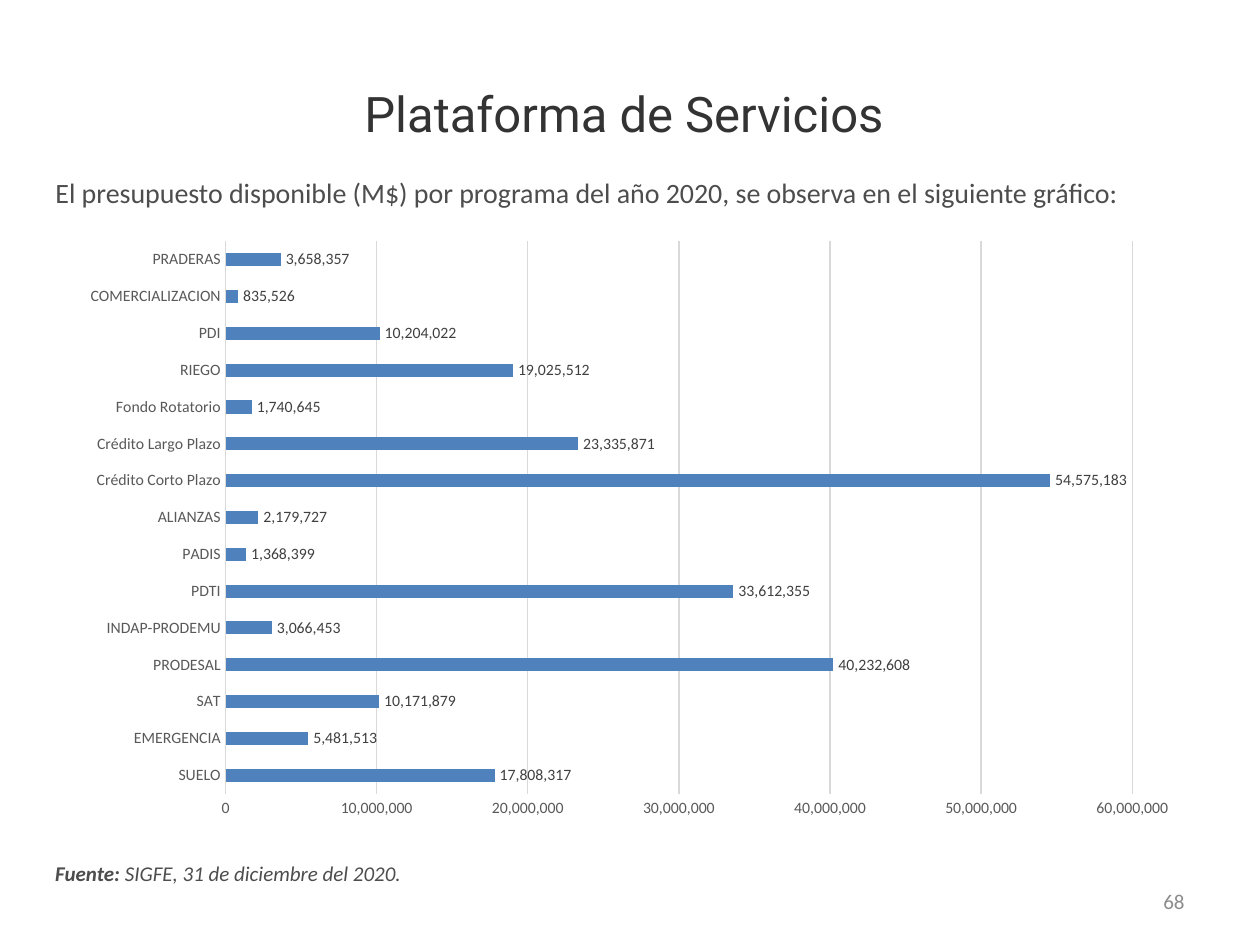
from lxml import etree
from pptx import Presentation
from pptx.chart.data import CategoryChartData
from pptx.dml.color import RGBColor
from pptx.enum.chart import XL_CHART_TYPE, XL_LABEL_POSITION, XL_TICK_MARK
from pptx.enum.text import MSO_ANCHOR, MSO_AUTO_SIZE, PP_ALIGN
from pptx.oxml.ns import qn
from pptx.util import Inches, Pt

BAR = XL_CHART_TYPE.BAR_CLUSTERED
OUT_END = XL_LABEL_POSITION.OUTSIDE_END
NO_TICK = XL_TICK_MARK.NONE
TOP, MIDDLE = MSO_ANCHOR.TOP, MSO_ANCHOR.MIDDLE
GROW, FIXED = MSO_AUTO_SIZE.SHAPE_TO_FIT_TEXT, MSO_AUTO_SIZE.NONE
LEFT, CENTER, RIGHT, JUSTIFY = PP_ALIGN.LEFT, PP_ALIGN.CENTER, PP_ALIGN.RIGHT, PP_ALIGN.JUSTIFY

THEME = {
    "head": ("Roboto", 28, "333333"),
    "lead": ("Calibri", 16, "4D4D4D"),
    "note": ("Calibri", 12, "4D4D4D"),
    "page": ("Calibri", 12, "8C8C8C"),
    "chart": ("Calibri", 10, "000000"),
    "axis": ("Calibri", 9, "595959"),
    "label": ("Calibri", 9, "404040"),
    "bar": RGBColor.from_string("4F81BD"),
    "grid": RGBColor.from_string("D9D9D9"),
}

deck = Presentation()
deck.slide_width, deck.slide_height = Inches(10), Inches(7.5)
COL, ROW = deck.slide_width / 100, deck.slide_height / 75
slide = deck.slides.add_slide(deck.slide_layouts[1])
shapes = slide.shapes


def style(font, role):
    font.name, size, color = THEME[role]
    font.size = Pt(size)
    font.color.rgb = RGBColor.from_string(color)


def place(shape, box, role, runs, align, anchor, fit):
    left, top, width, height = box
    shape.left, shape.width = round(left * COL), round(width * COL)
    shape.top, shape.height = round(top * ROW), round(height * ROW)
    frame = shape.text_frame
    frame.word_wrap = True
    frame.auto_size = fit
    frame.vertical_anchor = anchor
    para = frame.paragraphs[0]
    para.alignment = align
    para.space_before = Pt(0)
    for text, bold, italic in runs:
        run = para.add_run()
        run.text = text
        style(run.font, role)
        run.font.bold, run.font.italic = bold, italic
    return para


place(shapes.title, (5, 4.6, 90, 8.8), "head",
      [("Plataforma de Servicios ", False, False)], CENTER, MIDDLE, FIXED)

lead = place(
    slide.placeholders[1], (3.4, 13.4, 90, 3.7), "lead",
    [("El presupuesto disponible (M$) por programa del año 2020, "
      "se observa en el siguiente gráfico:", False, False)],
    JUSTIFY, TOP, GROW)
props = lead._p.get_or_add_pPr()
props.set("marL", "0")
props.set("indent", "0")
etree.SubElement(props, qn("a:buNone"))

place(shapes.add_textbox(0, 0, 0, 0), (3.4, 67.8, 88.4, 3), "note",
      [("Fuente: ", True, True), ("SIGFE, 31 de diciembre del 2020.", False, True)],
      LEFT, TOP, GROW)
place(shapes.add_textbox(0, 0, 0, 0), (71.7, 69.5, 23.3, 4), "page",
      [("68", False, False)], RIGHT, MIDDLE, FIXED)

funds = {
    "SUELO": 17808317,
    "EMERGENCIA": 5481513,
    "SAT": 10171879,
    "PRODESAL": 40232608,
    "INDAP-PRODEMU": 3066453,
    "PDTI": 33612355,
    "PADIS": 1368399,
    "ALIANZAS": 2179727,
    "Crédito Corto Plazo": 54575183,
    "Crédito Largo Plazo": 23335871,
    "Fondo Rotatorio": 1740645,
    "RIEGO": 19025512,
    "PDI": 10204022,
    "COMERCIALIZACION": 835526,
    "PRADERAS": 3658357,
}
data = CategoryChartData(number_format="#,##0")
data.categories = list(funds)
data.add_series("Series 1", list(funds.values()))
chart = shapes.add_chart(BAR, round(5.4 * COL), round(18.2 * ROW),
                         round(89.1 * COL), round(47.6 * ROW), data).chart
chart.has_legend = False
chart.has_title = False
style(chart.font, "chart")

plot = chart.plots[0]
plot.gap_width = 182
plot.vary_by_categories = False
fill = plot.series[0].format.fill
fill.solid()
fill.fore_color.rgb = THEME["bar"]

plot.has_data_labels = True
labels = plot.data_labels
labels.show_value = True
labels.number_format, labels.number_format_is_linked = "#,##0", False
labels.position = OUT_END
style(labels.font, "label")

cats, vals = chart.category_axis, chart.value_axis
for axis in (cats, vals):
    axis.major_tick_mark = axis.minor_tick_mark = NO_TICK
    style(axis.tick_labels.font, "axis")
cats.has_major_gridlines = False
vals.has_major_gridlines = True
vals.minimum_scale, vals.maximum_scale, vals.major_unit = 0, 60000000, 10000000
vals.tick_labels.number_format = "#,##0"
vals.tick_labels.number_format_is_linked = False
vals.format.line.fill.background()
for line in (cats.format.line, vals.major_gridlines.format.line):
    line.color.rgb = THEME["grid"]
    line.width = Pt(0.75)

deck.save("out.pptx")
